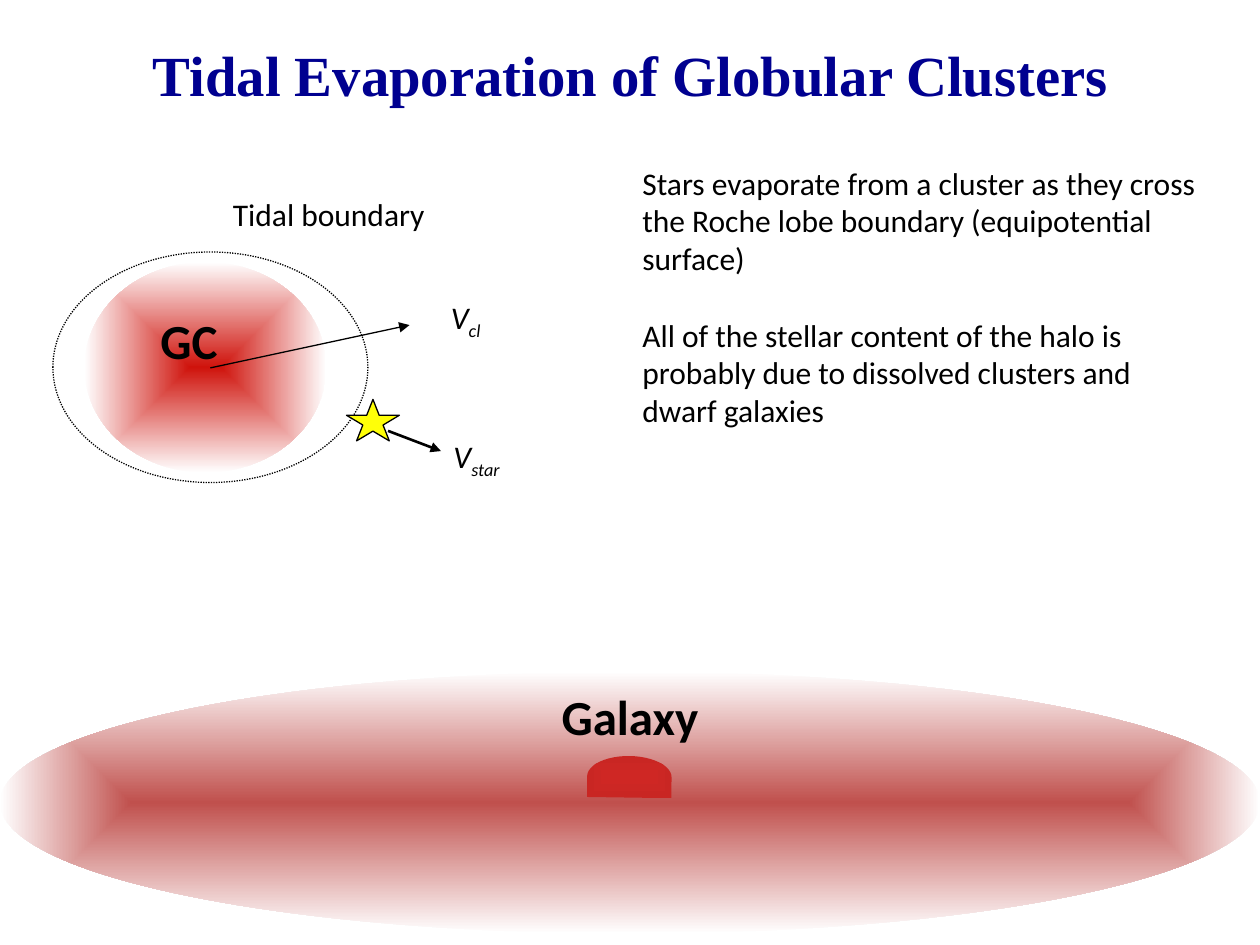
from lxml import etree
from pptx import Presentation
from pptx.dml.color import RGBColor
from pptx.enum.dml import MSO_LINE
from pptx.enum.shapes import MSO_CONNECTOR, MSO_SHAPE
from pptx.enum.text import MSO_ANCHOR, PP_ALIGN
from pptx.oxml.ns import qn
from pptx.util import Inches, Pt

ELLIPSE, DELAY, STAR = MSO_SHAPE.OVAL, MSO_SHAPE.FLOWCHART_DELAY, MSO_SHAPE.STAR_5_POINT
STRAIGHT = MSO_CONNECTOR.STRAIGHT
DOTTED = MSO_LINE.ROUND_DOT
LEFT, CENTER = PP_ALIGN.LEFT, PP_ALIGN.CENTER
TOP, MIDDLE = MSO_ANCHOR.TOP, MSO_ANCHOR.MIDDLE

BLACK, WHITE, NAVY, YELLOW = "000000", "FFFFFF", "000090", "FFFF08"
BODY = {"name": "Calibri", "size": Pt(18)}
SYMBOL = {**BODY, "italic": True}
LABEL = {"name": "Calibri", "size": Pt(28), "bold": True}
TITLE = {"name": "Times New Roman", "size": Pt(32.4), "bold": True}


def rgb(color):
    return RGBColor.from_string(color)


def add_run(p, text, style, color=BLACK):
    r = p.add_run()
    r.text = text
    for name, value in style.items():
        setattr(r.font, name, value)
    r.font.color.rgb = rgb(color)
    return r


def add_text(slide, box, paragraphs, style, color=BLACK, align=LEFT, anchor=TOP,
             wrap=True, gap=0):
    """Add a text box and return its last paragraph."""
    tf = slide.shapes.add_textbox(*map(Inches, box)).text_frame
    tf.word_wrap = wrap
    tf.vertical_anchor = anchor
    for i, text in enumerate(paragraphs):
        p = tf.add_paragraph() if i else tf.paragraphs[0]
        p.alignment = align
        if i:
            p.space_before = Pt(gap)
        add_run(p, text, style, color)
    return p


def add_velocity(slide, box, subscript):
    p = add_text(slide, box, ["V"], SYMBOL, wrap=False)
    r = add_run(p, subscript, SYMBOL)
    r.font._element.set("baseline", "-25000")


def add_shape(slide, kind, box, fill=None, line=None, dash=None):
    sp = slide.shapes.add_shape(kind, *map(Inches, box))
    sp.shadow.inherit = False
    if fill:
        sp.fill.solid()
        sp.fill.fore_color.rgb = rgb(fill)
    else:
        sp.fill.background()
    if line:
        sp.line.color.rgb = rgb(line)
        sp.line.width = Pt(0.75)
        sp.line.dash_style = dash
    else:
        sp.line.fill.background()
    return sp


def add_glow(slide, kind, box, inner, outer):
    """Add a shape whose colour runs from its centre to its edge."""
    sp = add_shape(slide, kind, box)
    sp.fill.gradient()
    for stop, color, position in zip(sp.fill.gradient_stops, (inner, outer), (0, 1)):
        stop.color.rgb = rgb(color)
        stop.position = position
    grad = sp._element.spPr.find(qn("a:gradFill"))
    grad.remove(grad.find(qn("a:lin")))
    shade = etree.SubElement(grad, qn("a:path"), {"path": "shape"})
    etree.SubElement(shade, qn("a:fillToRect"), dict.fromkeys("ltrb", "50000"))
    return sp


def add_arrow(slide, start, end, width):
    line = slide.shapes.add_connector(STRAIGHT, *map(Inches, (*start, *end)))
    line.line.color.rgb = rgb(BLACK)
    line.line.width = Pt(width)
    etree.SubElement(line.line._get_or_add_ln(), qn("a:tailEnd"), {"type": "triangle"})
    etree.SubElement(line._element.spPr, qn("a:effectLst"))


def add_galaxy(slide):
    add_glow(slide, ELLIPSE, (0, 5.33, 10, 2.08), "C0504D", WHITE)
    add_text(slide, (4, 5.4, 2, 0.57), ["Galaxy"], LABEL, align=CENTER, anchor=MIDDLE)


def add_cluster(slide):
    add_glow(slide, ELLIPSE, (0.67, 2.08, 1.92, 1.67), "CF130C", WHITE)
    add_text(slide, (1, 2.41, 1, 0.57), ["GC"], LABEL, align=CENTER, anchor=MIDDLE)


def main():
    prs = Presentation()
    prs.slide_width, prs.slide_height = Inches(10), Inches(7.5)
    slide = prs.slides.add_slide(prs.slide_layouts[6])

    add_text(slide, (0.17, 0.25, 9.67, 0.67), ["Tidal Evaporation of Globular Clusters"],
             TITLE, NAVY, CENTER, MIDDLE)
    add_galaxy(slide)
    add_cluster(slide)
    bulge = add_glow(slide, DELAY, (4.83, 5.83, 0.33, 0.67), "CF2724", "C92623")
    bulge.rotation = 270.8

    add_shape(slide, ELLIPSE, (0.42, 2, 2.5, 1.83), line=BLACK, dash=DOTTED)
    add_shape(slide, STAR, (2.75, 3.17, 0.42, 0.33), YELLOW, BLACK)
    add_arrow(slide, (3.08, 3.42), (3.5, 3.58), 1.5)
    add_text(slide, (1.75, 1.5, 2.24, 0.5), ["Tidal boundary"], BODY, wrap=False)
    add_arrow(slide, (1.67, 2.92), (3.25, 2.58), 0.75)
    add_velocity(slide, (3.48, 2.32, 0.57, 0.5), "cl")
    add_velocity(slide, (3.5, 3.42, 0.75, 0.5), "star")

    add_text(slide, (5, 1.25, 4.67, 2.9), [
        "Stars evaporate from a cluster as they cross the Roche lobe boundary "
        "(equipotential surface)",
        "All of the stellar content of the halo is probably due to dissolved "
        "clusters and dwarf galaxies",
    ], BODY, gap=22)

    prs.save("out.pptx")


if __name__ == "__main__":
    main()
